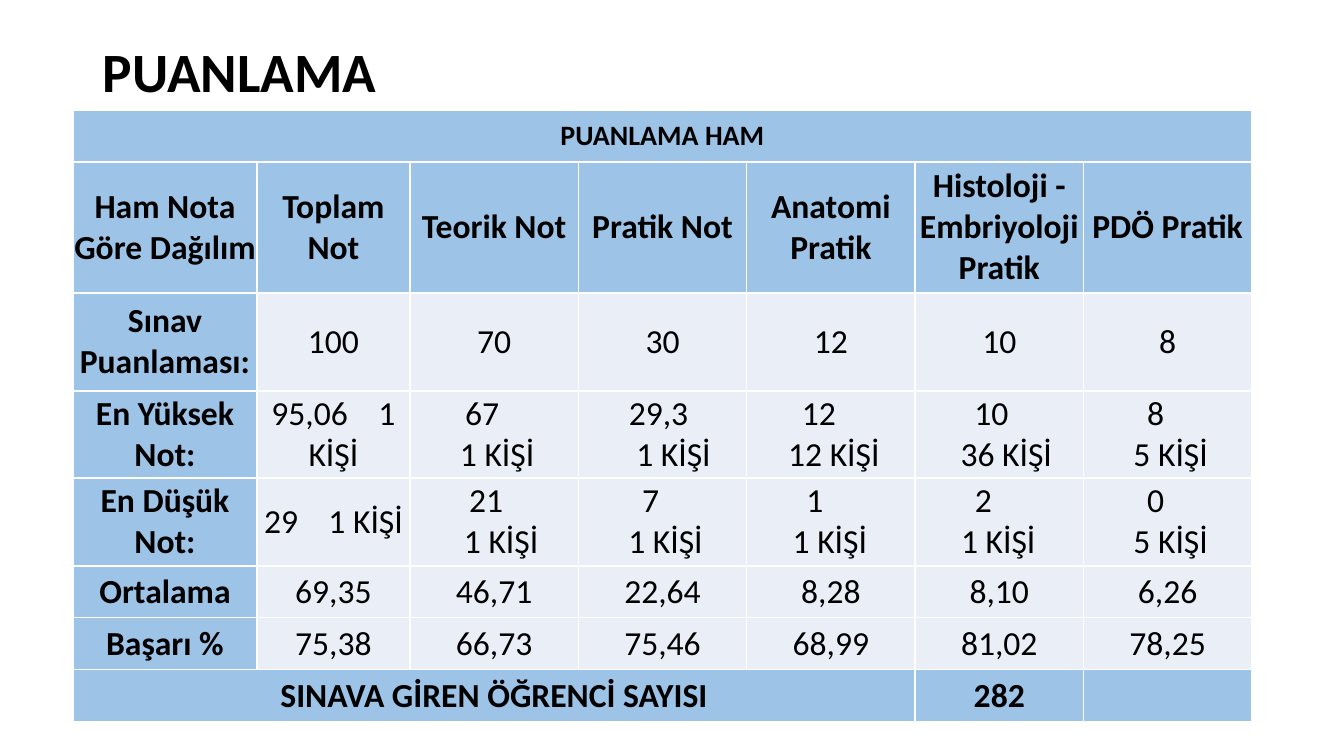
from lxml import etree
from pptx import Presentation
from pptx import util as u
from pptx.dml.color import RGBColor
from pptx.enum import text
from pptx.oxml.ns import qn

EMU_PER_PX = 914400 / 100.8
HEADING_BLUE, VALUE_BLUE, WHITE, BLACK = "9DC3E6", "EAEFF7", "FFFFFF", "000000"

FIRST_COLUMNS = [184, 153]
ROW_HEIGHTS = [52, 131, 98, 87, 88, 52, 52, 52]
SPACE = 8           # width of one space at 24 pt
COUNT_INDENT = 30   # how far a head count stands right of its score
SCORE_GAP = 1630    # widened space between score and count, 1/100 pt

HEADINGS = ["Ham Nota Göre Dağılım", "Toplam Not", "Teorik Not", "Pratik Not",
            "Anatomi Pratik", "Histoloji - Embriyoloji Pratik", "PDÖ Pratik"]
# A score with a head count is (score, count, spaces kept free on the right).
# Without the third item, both stand on one line.
SCORES = [
    ["Sınav Puanlaması:", "100", "70", "30", "12", "10", "8"],
    ["En Yüksek Not:", ("95,06", "1 KİŞİ"), ("67", "1 KİŞİ", 3), ("29,3", "1 KİŞİ", 1),
     ("12", "12 KİŞİ", 3), ("10", "36 KİŞİ", 2), ("8", "5 KİŞİ", 3)],
    ["En Düşük Not:", ("29", "1 KİŞİ"), ("21", "1 KİŞİ", 2), ("7", "1 KİŞİ", 3),
     ("1", "1 KİŞİ", 4), ("2", "1 KİŞİ", 4), ("0", "5 KİŞİ", 3)],
    ["Ortalama", "69,35", "46,71", "22,64", "8,28", "8,10", "6,26"],
    ["Başarı %", "75,38", "66,73", "75,46", "68,99", "81,02", "78,25"],
]


def px(length):
    return u.Emu(round(length * EMU_PER_PX))


def color(hex_string):
    return RGBColor.from_string(hex_string)


def apply(target, values):
    for name, value in values.items():
        setattr(target, name, value)


def add_run(paragraph, wording, size, bold):
    run = paragraph.add_run()
    run.text = wording
    apply(run.font, {"name": "Calibri", "size": u.Pt(size), "bold": bold})
    run.font.color.rgb = color(BLACK)
    return run


def add_borders(cell):
    properties = cell._tc.get_or_add_tcPr()
    for position, side in enumerate(["a:lnL", "a:lnR", "a:lnT", "a:lnB"]):
        line = etree.Element(qn(side), w=str(u.Pt(1)))
        fill = etree.SubElement(line, qn("a:solidFill"))
        etree.SubElement(fill, qn("a:srgbClr"), val=WHITE)
        properties.insert(position, line)


def fill_cell(cell, content, background, size=24, bold=True):
    apply(cell, {"margin_left": 0, "margin_right": 0, "margin_top": 0, "margin_bottom": 0,
                 "vertical_anchor": text.MSO_ANCHOR.MIDDLE})
    cell.fill.solid()
    cell.fill.fore_color.rgb = color(background)
    add_borders(cell)
    score_line = cell.text_frame.paragraphs[0]
    score_line.alignment = text.PP_ALIGN.CENTER
    if isinstance(content, str):
        if content:
            add_run(score_line, content, size, bold)
        return
    score, count, *spaces = content
    add_run(score_line, score, size, bold)
    if spaces:
        cell.margin_right = px(spaces[0] * SPACE)
        count_line = cell.text_frame.add_paragraph()
        count_line.alignment = text.PP_ALIGN.CENTER
        count_line._p.get_or_add_pPr().set("marL", str(px(COUNT_INDENT)))
    else:
        count_line = score_line
        gap = add_run(score_line, " ", size, bold)
        gap._r.get_or_add_rPr().set("spc", str(SCORE_GAP))
    add_run(count_line, count, size, bold)


def add_title(slide, left, top, width, height):
    frame = slide.shapes.add_textbox(*map(px, (left, top, width, height))).text_frame
    apply(frame, {"word_wrap": True, "vertical_anchor": text.MSO_ANCHOR.MIDDLE})
    frame.paragraphs[0].line_spacing = 0.9
    add_run(frame.paragraphs[0], "PUANLAMA", 39.6, True)


def add_score_table(slide, left, top, width):
    box = map(px, (left, top, width, sum(ROW_HEIGHTS)))
    table = slide.shapes.add_table(len(ROW_HEIGHTS), len(HEADINGS), *box).table
    apply(table, {"first_row": False, "horz_banding": False})
    equal_columns = len(HEADINGS) - len(FIRST_COLUMNS)
    equal_width = (width - sum(FIRST_COLUMNS)) / equal_columns
    for column, column_width in zip(table.columns, FIRST_COLUMNS + [equal_width] * equal_columns):
        column.width = px(column_width)
    for row, height in zip(table.rows, ROW_HEIGHTS):
        row.height = px(height)

    last_row, last_column = len(ROW_HEIGHTS) - 1, len(HEADINGS) - 1
    table.cell(0, 0).merge(table.cell(0, last_column))
    table.cell(last_row, 0).merge(table.cell(last_row, 4))
    banner = ["PUANLAMA HAM"] + [""] * last_column
    student_total = ["SINAVA GİREN ÖĞRENCİ SAYISI", "", "", "", "", "282", ""]
    for r, contents in enumerate([banner, HEADINGS, *SCORES, student_total]):
        for c, content in enumerate(contents):
            heading = r in (0, 1, last_row) or c == 0
            fill_cell(table.cell(r, c), content, HEADING_BLUE if heading else VALUE_BLUE,
                      size=20 if r == 0 else 24, bold=heading)


def main():
    deck = Presentation()
    apply(deck, {"slide_width": px(1344), "slide_height": px(756)})
    slide = deck.slides.add_slide(deck.slide_layouts[6])
    add_title(slide, 93, 40, 1159, 70)
    add_score_table(slide, 73, 110, 1179)
    deck.save("out.pptx")


if __name__ == "__main__":
    main()
